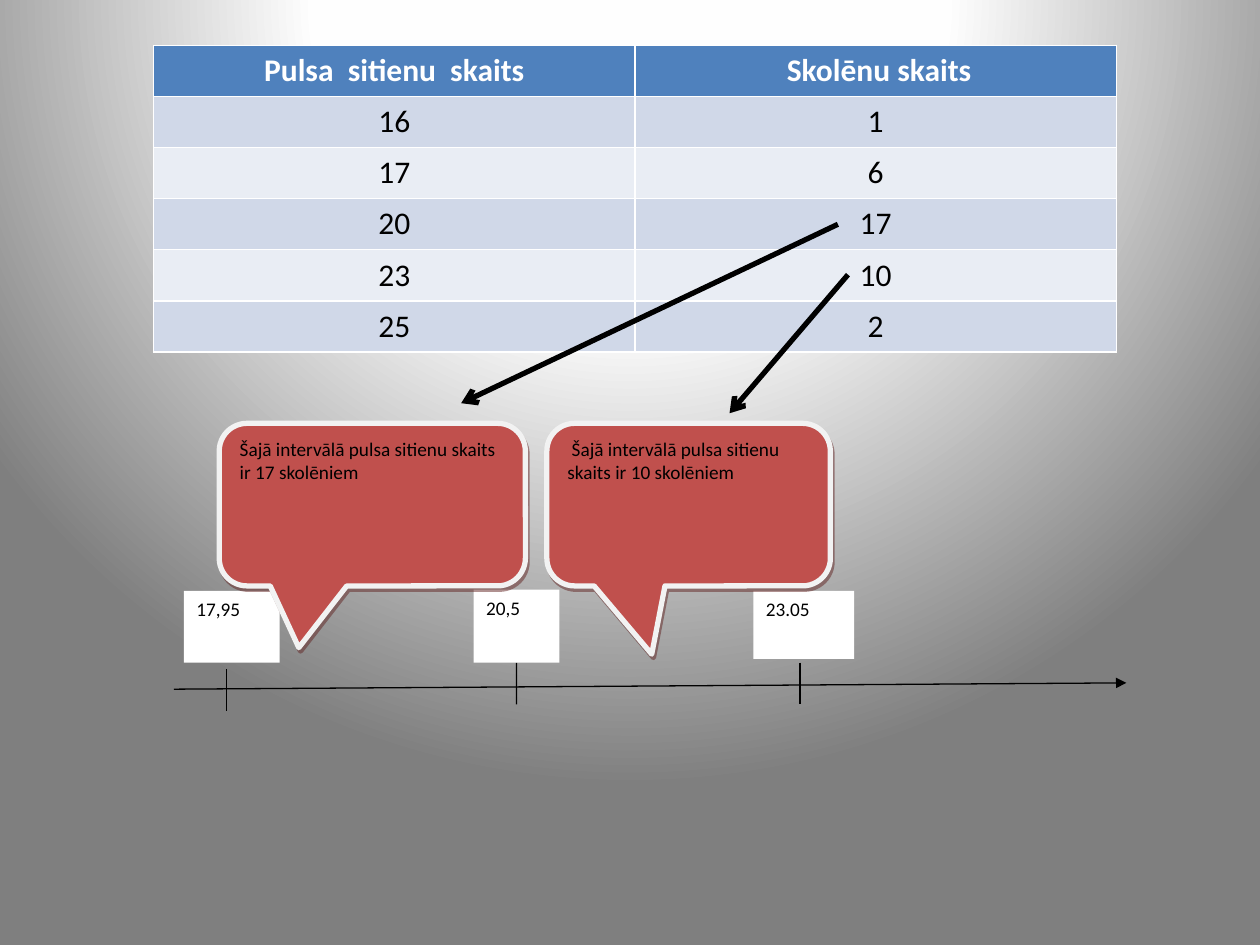
"""Build the slide that maps pulse counts to intervals on a number line."""
from pptx import Presentation
from pptx import oxml
from pptx.dml.color import RGBColor
from pptx.enum import shapes, text
from pptx.oxml import ns
from pptx.util import Inches, Pt

BLACK = RGBColor(0x00, 0x00, 0x00)
WHITE = RGBColor(0xFF, 0xFF, 0xFF)
BLUE = RGBColor(0x4F, 0x81, 0xBD)
BANDS = RGBColor(0xD0, 0xD8, 0xE8), RGBColor(0xE9, 0xED, 0xF4)
RED = RGBColor(0xC0, 0x50, 0x4D)
PALE = RGBColor(0xF2, 0xF2, 0xF2)
MAROON = RGBColor(0x62, 0x24, 0x23)
FONT = "Calibri"

ROWS = [
    ("Pulsa  sitienu  skaits", " Skolēnu skaits"),
    ("16", "1"),
    ("17", "6"),
    ("20", "17"),
    ("23", "10"),
    ("25", "2"),
]
TICKS = [(1.8, 5.31), (4.1, 5.26), (6.35, 5.26)]
LABELS = [
    ("17,95", (1.46, 4.69, 0.76, 0.57)),
    ("20,5", (3.76, 4.68, 0.68, 0.58)),
    ("23.05", (5.98, 4.69, 0.8, 0.54)),
]
NOTES = [
    ("Šajā intervālā pulsa sitienu skaits  ir 17 skolēniem",
     (1.74, 3.36, 2.43, 1.29), (-0.24, 0.88, 0.17)),
    (" Šajā intervālā pulsa sitienu skaits ir 10 skolēniem",
     (4.34, 3.36, 2.25, 1.29), (-0.13, 0.92, 0.17)),
]
ARROWS = [((6.65, 1.78), (3.66, 3.2)), ((6.73, 2.18), (5.79, 3.28))]


def paint(slide):
    """Give the slide a round gradient from white to grey."""
    stops = "".join(
        f'<a:gs pos="{pos * 1000}"><a:srgbClr val="{color}"/></a:gs>'
        for pos, color in ((0, "FFFFFF"), (40, "FEFEFE"), (100, "7F7F7F")))
    back = oxml.parse_xml(
        f'<p:bg {ns.nsdecls("p", "a")}><p:bgPr><a:gradFill rotWithShape="1">'
        f'<a:gsLst>{stops}</a:gsLst><a:path path="circle">'
        '<a:fillToRect l="50000" t="-80000" r="50000" b="180000"/></a:path>'
        '</a:gradFill><a:effectLst/></p:bgPr></p:bg>')
    slide.element.cSld.insert(0, back)


def style(frame, size, color, bold=False):
    """Format every run of a text frame."""
    for para in frame.paragraphs:
        for run in para.runs:
            run.font.name = FONT
            run.font.size = Pt(size)
            run.font.bold = bold
            run.font.color.rgb = color


def add_line(slide, start, end, width, head=None):
    """Draw a black line, with an arrowhead at its end if one is named."""
    line = slide.shapes.add_connector(
        shapes.MSO_CONNECTOR.STRAIGHT, *map(Inches, start + end))
    line.line.color.rgb = BLACK
    line.line.width = Pt(width)
    props = line.element.spPr
    if head:
        oxml.ns.qn("a:ln")
        tail = oxml.parse_xml(f'<a:tailEnd {ns.nsdecls("a")} type="{head}"/>')
        props.find(ns.qn("a:ln")).append(tail)
    props.append(oxml.parse_xml(f'<a:effectLst {ns.nsdecls("a")}/>'))
    return line


def add_box(slide, kind, words, place, fill):
    """Add a filled shape with small text at its top left."""
    box = slide.shapes.add_shape(kind, *map(Inches, place))
    box.shadow.inherit = False
    box.fill.solid()
    box.fill.fore_color.rgb = fill
    box.line.fill.background()
    frame = box.text_frame
    frame.word_wrap = True
    frame.vertical_anchor = text.MSO_ANCHOR.TOP
    para = frame.paragraphs[0]
    para.text = words
    para.alignment = text.PP_ALIGN.LEFT
    para.space_after = Pt(10)
    style(frame, 11, BLACK)
    return box


def add_note(slide, words, place, tip):
    """Add a red callout with a pale outline and a soft shadow."""
    kind = shapes.MSO_SHAPE.ROUNDED_RECTANGULAR_CALLOUT
    note = add_box(slide, kind, words, place, RED)
    for index, value in enumerate(tip):
        note.adjustments[index] = value
    note.line.color.rgb = PALE
    note.line.width = Pt(3)
    note.element.spPr.find(ns.qn("a:effectLst")).append(oxml.parse_xml(
        f'<a:outerShdw {ns.nsdecls("a")} dist="{Pt(2.2)}" dir="{63 * 60000}" '
        f'algn="ctr" rotWithShape="0"><a:srgbClr val="{MAROON}">'
        '<a:alpha val="50000"/></a:srgbClr></a:outerShdw>'))


def add_grid(slide):
    """Add the table of pulse counts and pupils."""
    place = map(Inches, (1.22, 0.36, 7.64, 2.43))
    grid = slide.shapes.add_table(len(ROWS), len(ROWS[0]), *place).table
    for row, pair in enumerate(ROWS):
        for col, words in enumerate(pair):
            cell = grid.cell(row, col)
            cell.fill.solid()
            cell.fill.fore_color.rgb = BANDS[(row - 1) % 2] if row else BLUE
            para = cell.text_frame.paragraphs[0]
            para.text = words
            para.alignment = text.PP_ALIGN.CENTER
            style(cell.text_frame, 18, BLACK if row else WHITE, row == 0)


def add_axis(slide):
    """Add the number line with its ticks and labels."""
    add_line(slide, (1.38, 5.47), (8.94, 5.42), 0.75, "triangle")
    ticks = [add_line(slide, (x, y), (x, y + 0.33), 0.75) for x, y in TICKS]
    boxes = [add_box(slide, shapes.MSO_SHAPE.RECTANGLE, words, place, WHITE)
             for words, place in LABELS]
    ticks[1].begin_connect(boxes[1], 2)


def main():
    """Build and save the slide."""
    deck = Presentation()
    deck.slide_width, deck.slide_height = Inches(10), Inches(7.5)
    slide = deck.slides.add_slide(deck.slide_layouts[6])
    paint(slide)
    add_axis(slide)
    for note in NOTES:
        add_note(slide, *note)
    add_grid(slide)
    for start, end in ARROWS:
        add_line(slide, start, end, 3, "arrow")
    deck.save("out.pptx")


if __name__ == "__main__":
    main()
